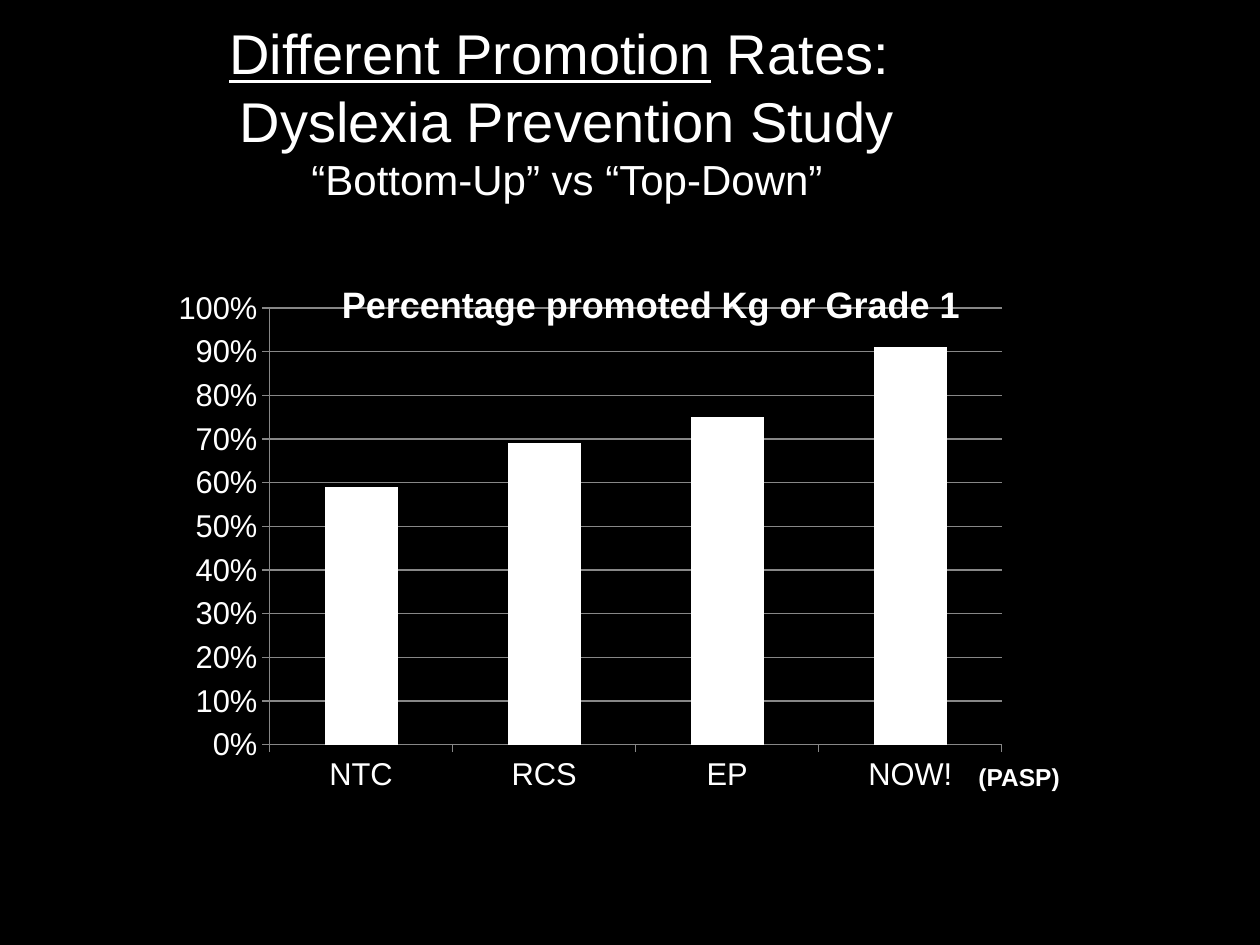
from lxml.etree import SubElement
from pptx import Presentation
from pptx.chart.data import CategoryChartData
from pptx.dml.color import RGBColor
from pptx.enum.chart import XL_CHART_TYPE, XL_TICK_MARK
from pptx.enum.text import MSO_ANCHOR, PP_ALIGN
from pptx.oxml.ns import qn
from pptx.util import Pt

THEME = {
    "back": RGBColor(0, 0, 0),
    "ink": RGBColor(255, 255, 255),
    "grid": RGBColor(0x87, 0x87, 0x87),
    "face": "Arial",
    "title": Pt(32),
    "sub": Pt(24),
    "head": Pt(21),
    "axis": Pt(18),
    "note": Pt(14),
}


def apply(item, **style):
    for key, value in style.items():
        setattr(item, key, value)


def ink(font, size, **style):
    apply(font, name=THEME["face"], size=THEME[size], **style)
    font.color.rgb = THEME["ink"]


def add_text(slide, box, align, runs):
    frame = slide.shapes.add_textbox(*map(Pt, box)).text_frame
    apply(frame, word_wrap=True, vertical_anchor=MSO_ANCHOR.BOTTOM)
    line = frame.paragraphs[0]
    line.alignment = align
    for text, size, style in runs:
        if text == "\v":
            line.add_line_break()
            continue
        run = line.add_run()
        run.text = text
        ink(run.font, size, **style)


def add_title(slide, box):
    add_text(slide, box, PP_ALIGN.CENTER, [
        ("Different Promotion", "title", {"underline": True}),
        (" Rates: ", "title", {}),
        ("\v", "title", {}),
        ("Dyslexia Prevention Study", "title", {}),
        ("\v", "title", {}),
        ("“Bottom-Up” vs “Top-Down”", "sub", {}),
    ])


def add_note(slide, box):
    add_text(slide, box, PP_ALIGN.LEFT, [("(PASP)", "note", {"bold": True})])


def set_layout(node, index, **values):
    for old in node.findall(qn("c:layout")):
        node.remove(old)
    layout = SubElement(node, qn("c:layout"))
    node.insert(index, layout)
    manual = SubElement(layout, qn("c:manualLayout"))
    for key, value in values.items():
        SubElement(manual, qn("c:" + key)).set("val", str(value))


def add_rates(slide, box):
    data = CategoryChartData(number_format="0%")
    data.categories = ["NTC", "RCS", "EP", "NOW!"]
    data.add_series("Series 1", [0.59, 0.69, 0.75, 0.91])
    chart = slide.shapes.add_chart(
        XL_CHART_TYPE.COLUMN_CLUSTERED, *map(Pt, box), data).chart
    apply(chart, has_legend=False, has_title=True)
    ink(chart.font, "axis")

    title = chart.chart_title
    title.include_in_layout = True
    title.text_frame.text = "Percentage promoted Kg or Grade 1"
    ink(title.text_frame.paragraphs[0].runs[0].font, "head", bold=True)
    set_layout(title._element, 1, xMode="edge", yMode="edge", x=0.17, y=0.04)
    set_layout(chart._chartSpace.chart.plotArea, 0, layoutTarget="inner",
               xMode="edge", yMode="edge", x=0.09, y=0.1, w=0.89, h=0.78)

    plot = chart.plots[0]
    apply(plot, gap_width=150, vary_by_categories=False)
    fill = plot.series[0].format.fill
    fill.solid()
    fill.fore_color.rgb = THEME["ink"]

    rate = chart.value_axis
    apply(rate, minimum_scale=0, maximum_scale=1, major_unit=0.1,
          has_major_gridlines=True)
    apply(rate.tick_labels, number_format="0%", number_format_is_linked=False)
    for axis in (chart.category_axis, rate):
        axis.major_tick_mark = XL_TICK_MARK.OUTSIDE
        ink(axis.tick_labels.font, "axis", bold=False)
    for part in (chart.category_axis, rate, rate.major_gridlines):
        part.format.line.width = Pt(0.75)
        part.format.line.color.rgb = THEME["grid"]


def main():
    deck = Presentation()
    apply(deck, slide_width=Pt(720), slide_height=Pt(540))
    slide = deck.slides.add_slide(deck.slide_layouts[6])
    fill = slide.background.fill
    fill.solid()
    fill.fore_color.rgb = THEME["back"]
    add_title(slide, (42, 0, 564, 120))
    add_rates(slide, (102, 144, 480, 320))
    add_note(slide, (552, 408, 96, 48))
    deck.save("out.pptx")


if __name__ == "__main__":
    main()
